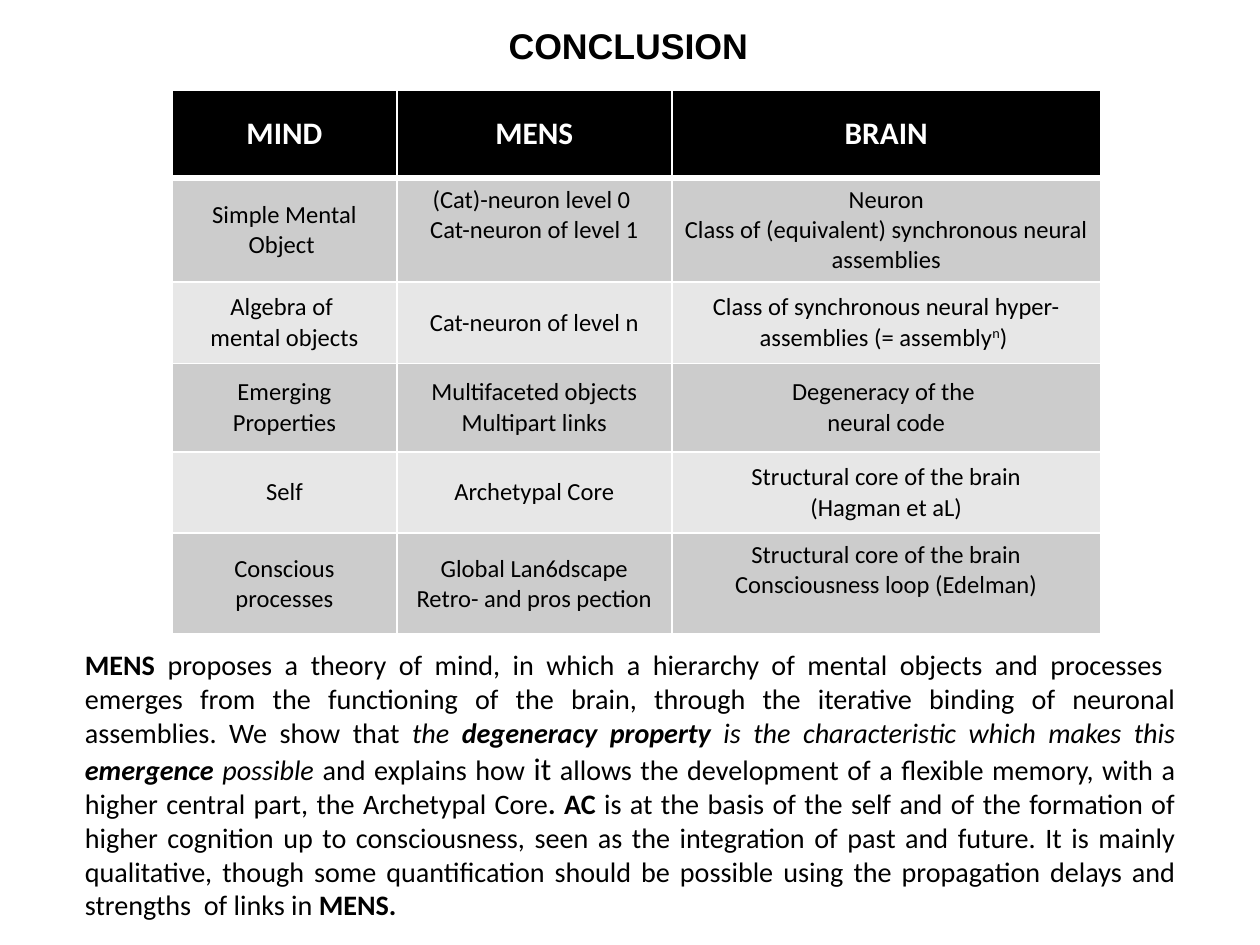
from dataclasses import dataclass

from lxml.etree import SubElement
from pptx import Presentation
from pptx.dml.color import RGBColor
from pptx.enum.text import MSO_ANCHOR, PP_ALIGN
from pptx.oxml.ns import qn
from pptx.util import Inches, Pt

WIDTH, HEIGHT = 7.84, 5.88


@dataclass(frozen=True)
class Theme:
    heading_font: str = "Arial"
    body_font: str = "Calibri"
    ink: str = "000000"
    paper: str = "FFFFFF"
    bands: tuple = ("CCCCCC", "E7E7E7")
    title: float = 16
    header: float = 14
    cell: float = 11
    body: float = 12.6
    accent: float = 14
    rule: float = 1
    header_rule: float = 3


THEME = Theme()

# Boxes: left, top, width, height in inches
TITLE_BOX = (1.39, 0.1, 5.04, 0.37)
TABLE_BOX = (1.07, 0.56, 5.78, 3.37)
SUMMARY_BOX = (0.43, 3.98, 6.98, 1.81)

# Shares of the table box
COLUMNS = (1.4, 1.71, 2.67)
ROWS = (0.55, 0.63, 0.51, 0.55, 0.51, 0.63)

# Each line is a paragraph; text between carets is superscript
TABLE = (
    ("MIND", "MENS", "BRAIN"),
    ("Simple Mental Object ",
     "(Cat)-neuron level 0 \nCat-neuron of level 1",
     "Neuron\nClass of (equivalent) synchronous neural assemblies"),
    ("Algebra of \nmental objects",
     "Cat-neuron of level n",
     "Class of synchronous neural hyper-assemblies (= assembly^n^) "),
    ("Emerging Properties",
     "Multifaceted objects\nMultipart links",
     "Degeneracy of the \nneural code"),
    ("Self",
     "Archetypal Core",
     "Structural core of the brain\n(Hagman et aL)"),
    ("Conscious processes",
     "Global Lan6dscape\nRetro- and pros pection",
     "Structural core of the brain\nConsciousness loop (Edelman)"),
)
TOP_CELLS = {(1, 1), (5, 2)}

BOLD, ITALIC = {"bold": True}, {"italic": True}
SUMMARY = (
    ("MENS ", BOLD),
    ("proposes a theory of mind, in which a hierarchy of mental objects and "
     "processes  emerges from the functioning of the brain, through the "
     "iterative binding of neuronal assemblies. We show that ", {}),
    ("the ", ITALIC),
    ("degeneracy property", BOLD | ITALIC),
    (" is the characteristic which makes this ", ITALIC),
    ("emergence", BOLD | ITALIC),
    (" possible", ITALIC),
    (" and explains how ", {}),
    ("it", {"size": THEME.accent}),
    (" allows the development of a flexible memory, with a higher central "
     "part, the Archetypal Core", {}),
    (". AC ", BOLD),
    ("is at the basis of the self and of the formation of higher cognition up "
     "to consciousness, seen as the integration of past and future. It is "
     "mainly qualitative, though some quantification should be possible using "
     "the propagation delays and strengths  of links in ", {}),
    ("MENS.", BOLD),
)


def add_run(p, text, size=THEME.body, font=THEME.body_font, color=THEME.ink,
            bold=False, italic=False, sup=False):
    r = p.add_run()
    r.text = text
    r.font.size, r.font.name = Pt(size), font
    r.font.bold, r.font.italic = bold, italic
    r.font.color.rgb = RGBColor.from_string(color)
    if sup:
        r.font._element.set("baseline", "30000")


def add_text(s, box, runs, align):
    tf = s.shapes.add_textbox(*map(Inches, box)).text_frame
    tf.word_wrap = True
    p = tf.paragraphs[0]
    p.alignment = align
    for text, fmt in runs:
        add_run(p, text, **fmt)


def set_borders(cell, bottom):
    pr = cell._tc.get_or_add_tcPr()
    widths = {"lnL": THEME.rule, "lnR": THEME.rule, "lnT": THEME.rule, "lnB": bottom}
    for i, (side, width) in enumerate(widths.items()):
        ln = SubElement(pr, qn(f"a:{side}"), w=str(Pt(width)))
        fill = SubElement(ln, qn("a:solidFill"))
        SubElement(fill, qn("a:srgbClr"), val=THEME.paper)
        pr.insert(i, ln)


def fill_cell(cell, text, fill, anchor, bottom=THEME.rule, **fmt):
    cell.fill.solid()
    cell.fill.fore_color.rgb = RGBColor.from_string(fill)
    cell.vertical_anchor = anchor
    cell.margin_left = cell.margin_right = Inches(0.08)
    cell.margin_top = cell.margin_bottom = Inches(0.04)
    set_borders(cell, bottom)
    tf = cell.text_frame
    for i, line in enumerate(text.split("\n")):
        p = tf.add_paragraph() if i else tf.paragraphs[0]
        p.alignment = PP_ALIGN.CENTER
        for j, part in enumerate(line.split("^")):
            add_run(p, part, sup=j % 2 == 1, **fmt)


def add_comparison(s, box):
    frame = s.shapes.add_table(len(ROWS), len(COLUMNS), *map(Inches, box))
    table = frame.table
    for column, share in zip(table.columns, COLUMNS):
        column.width = Inches(box[2] * share / sum(COLUMNS))
    for row, share in zip(table.rows, ROWS):
        row.height = Inches(box[3] * share / sum(ROWS))
    for i, texts in enumerate(TABLE):
        for j, text in enumerate(texts):
            cell = table.cell(i, j)
            if i == 0:
                fill_cell(cell, text, THEME.ink, MSO_ANCHOR.MIDDLE, THEME.header_rule,
                          size=THEME.header, color=THEME.paper, bold=True)
            else:
                anchor = MSO_ANCHOR.TOP if (i, j) in TOP_CELLS else MSO_ANCHOR.MIDDLE
                fill_cell(cell, text, THEME.bands[(i - 1) % 2], anchor, size=THEME.cell)


def add_conclusion(prs):
    s = prs.slides.add_slide(prs.slide_layouts[6])
    # Comparison table
    add_comparison(s, TABLE_BOX)
    # Title
    title = {"size": THEME.title, "font": THEME.heading_font, "bold": True}
    add_text(s, TITLE_BOX, [("CONCLUSION", title)], PP_ALIGN.CENTER)
    # Summary paragraph
    add_text(s, SUMMARY_BOX, SUMMARY, PP_ALIGN.JUSTIFY)


def main():
    prs = Presentation()
    prs.slide_width, prs.slide_height = Inches(WIDTH), Inches(HEIGHT)
    add_conclusion(prs)
    prs.save("out.pptx")


if __name__ == "__main__":
    main()
